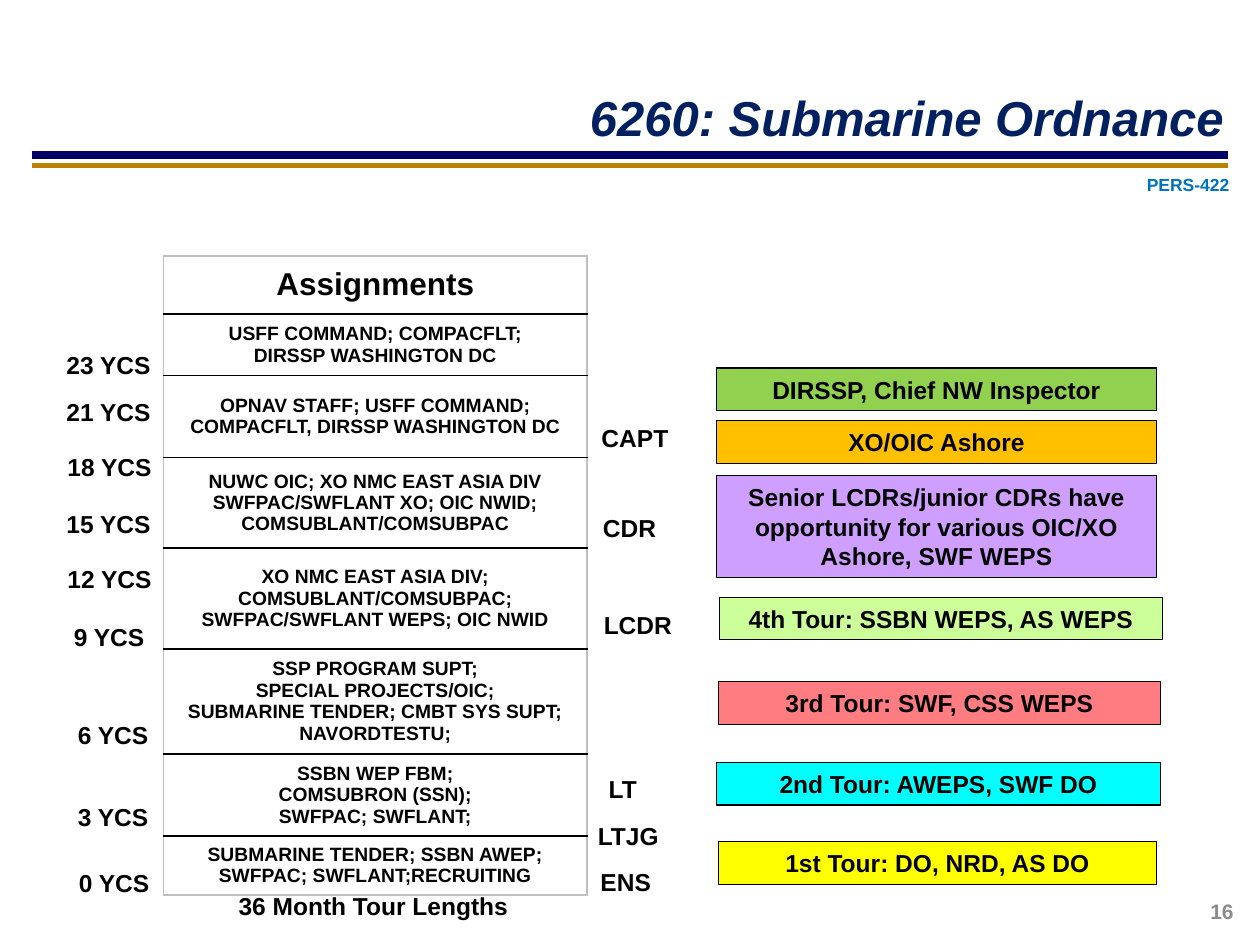
from pptx import Presentation
from pptx.dml.color import RGBColor
from pptx.enum.shapes import MSO_CONNECTOR, MSO_SHAPE
from pptx.enum.text import MSO_ANCHOR, MSO_AUTO_SIZE, PP_ALIGN
from pptx.oxml.ns import qn
from pptx.util import Cm, Pt
from lxml import etree

MID, RIGHT = PP_ALIGN.CENTER, PP_ALIGN.RIGHT
TOP, CENTER = MSO_ANCHOR.TOP, MSO_ANCHOR.MIDDLE
RECT = MSO_SHAPE.RECTANGLE
LINE = MSO_CONNECTOR.STRAIGHT
FIXED = MSO_AUTO_SIZE.NONE

COLORS = {
    "black": "000000", "white": "FFFFFF", "navy": "002060", "rule": "000066",
    "gold": "B98200", "blue": "0070C0", "gray": "8C8C8C", "edge": "BFBFBF",
    "green": "92D050", "orange": "FFC000", "purple": "CF9FFF",
    "lime": "CCFF99", "red": "FF7C80", "cyan": "00FFFF", "yellow": "FFFF00",
}

TOURS = [
    (1.17, 18, ["Assignments"]),
    (1.24, 11, ["USFF COMMAND; COMPACFLT;", "DIRSSP WASHINGTON DC"]),
    (1.65, 11, ["OPNAV STAFF; USFF COMMAND; COMPACFLT, DIRSSP WASHINGTON DC"]),
    (1.83, 11, ["NUWC OIC; XO NMC EAST ASIA DIV",
                "SWFPAC/SWFLANT XO; OIC NWID; COMSUBLANT/COMSUBPAC"]),
    (2.03, 11, ["XO NMC EAST ASIA DIV;", "COMSUBLANT/COMSUBPAC;",
                "SWFPAC/SWFLANT WEPS; OIC NWID"]),
    (2.11, 11, ["SSP PROGRAM SUPT;", "SPECIAL PROJECTS/OIC;",
                "SUBMARINE TENDER; CMBT SYS SUPT;", "NAVORDTESTU;"]),
    (1.65, 11, ["SSBN WEP FBM;", "COMSUBRON (SSN);", "SWFPAC; SWFLANT;"]),
    (1.19, 11, ["SUBMARINE TENDER; SSBN AWEP; SWFPAC; SWFLANT;RECRUITING"]),
]

YEARS = [
    (23, 1.07, 6.93), (21, 1.07, 7.87), (18, 1.09, 8.99), (15, 1.07, 10.13),
    (12, 1.09, 11.25), (9, 1.22, 12.42), (6, 1.3, 14.4), (3, 1.3, 16.05),
    (0, 1.32, 17.37),
]

RANKS = [
    ("CAPT", 11.86, 8.41, 1.88), ("CDR", 11.89, 10.21, 1.6),
    ("LCDR", 11.91, 12.17, 1.9), ("LT", 12.01, 15.47, 1.09),
    ("LTJG", 11.79, 16.43, 1.75), ("ENS", 11.84, 17.35, 1.55),
]

BARS = [
    ("DIRSSP, Chief NW Inspector", "green", 14.45, 7.42, 8.86, 0.86),
    ("XO/OIC Ashore", "orange", 14.45, 8.48, 8.86, 0.86),
    ("Senior LCDRs/junior CDRs have opportunity for various OIC/XO "
     "Ashore, SWF WEPS", "purple", 14.45, 9.58, 8.86, 2.06),
    ("4th Tour: SSBN WEPS, AS WEPS", "lime", 14.5, 12.04, 8.94, 0.86),
    ("3rd Tour: SWF, CSS WEPS", "red", 14.48, 13.74, 8.92, 0.86),
    ("2nd Tour: AWEPS, SWF DO", "cyan", 14.45, 15.37, 8.94, 0.86),
    ("1st Tour: DO, NRD, AS DO", "yellow", 14.48, 16.97, 8.84, 0.86),
]


def color(name):
    return RGBColor.from_string(COLORS[name])


class Board:
    font = "Arial"

    def __init__(self, slide):
        self.slide = slide
        self.shapes = slide.shapes

    def fill_text(self, frame, lines, size=14, ink="black", align=MID, slant=False):
        for i, line in enumerate(lines):
            para = frame.add_paragraph() if i else frame.paragraphs[0]
            para.alignment = align
            run = para.add_run()
            run.text = line
            font = run.font
            font.name, font.size = self.font, Pt(size)
            font.bold, font.italic = True, slant
            font.color.rgb = color(ink)

    def title(self, text, x, y, w, h):
        head = self.shapes.title
        head.left, head.top, head.width, head.height = map(Cm, (x, y, w, h))
        frame = head.text_frame
        frame.auto_size = FIXED
        frame.vertical_anchor = CENTER
        self.fill_text(frame, [text], 28, "navy", RIGHT, True)

    def label(self, text, x, y, w, h, wrap=False, anchor=TOP, **style):
        frame = self.shapes.add_textbox(*map(Cm, (x, y, w, h))).text_frame
        frame.word_wrap = wrap
        frame.vertical_anchor = anchor
        self.fill_text(frame, [text], **style)

    def bar(self, text, fill, x, y, w, h):
        box = self.shapes.add_shape(RECT, *map(Cm, (x, y, w, h)))
        box.shadow.inherit = False
        box.fill.solid()
        box.fill.fore_color.rgb = color(fill)
        box.line.color.rgb = color("black")
        box.line.width = Pt(0.75)
        box.text_frame.word_wrap = True
        box.text_frame.vertical_anchor = CENTER
        self.fill_text(box.text_frame, [text])

    def rule(self, y, ink, width):
        line = self.shapes.add_connector(LINE, Cm(0.64), Cm(y), Cm(24.76), Cm(y))
        line.line.color.rgb = color(ink)
        line.line.width = Pt(width)
        etree.SubElement(line._element.spPr, qn("a:effectLst"))

    def border(self, cell, side, ink):
        props = cell._tc.get_or_add_tcPr()
        edge = etree.SubElement(props, qn("a:ln" + side), w=str(Pt(1)))
        fill = etree.SubElement(edge, qn("a:solidFill"))
        etree.SubElement(fill, qn("a:srgbClr"), val=COLORS[ink])

    def table(self, rows, x, y, w):
        high = sum(row[0] for row in rows)
        grid = self.shapes.add_table(len(rows), 1, *map(Cm, (x, y, w, high))).table
        grid.first_row = grid.horz_banding = False
        last = len(rows) - 1
        for i, (tall, size, lines) in enumerate(rows):
            grid.rows[i].height = Cm(tall)
            cell = grid.cell(i, 0)
            self.border(cell, "L", "edge")
            self.border(cell, "R", "edge")
            self.border(cell, "T", "black" if i else "edge")
            self.border(cell, "B", "black" if i < last else "edge")
            cell.fill.solid()
            cell.fill.fore_color.rgb = color("white")
            cell.vertical_anchor = CENTER
            self.fill_text(cell.text_frame, lines, size)


def main():
    deck = Presentation()
    deck.slide_width, deck.slide_height = Cm(25.4), Cm(19.05)
    board = Board(deck.slides.add_slide(deck.slide_layouts[5]))
    board.rule(3.12, "rule", 4.5)
    board.rule(3.33, "gold", 2.75)
    board.title("6260: Submarine Ordnance", 6.3, 1.6, 18.62, 1.5)
    board.label("PERS-422", 22.86, 3.38, 2.18, 0.69, size=10, ink="blue")
    board.table(TOURS, 3.3, 5.16, 8.53)
    for year, x, y in YEARS:
        board.label(f"{year} YCS", x, y, 2.24 if year > 9 else 1.96, 0.89)
    for rank, x, y, w in RANKS:
        board.label(rank, x, y, w, 0.91)
    for bar in BARS:
        board.bar(*bar)
    board.label("36 Month Tour Lengths", 4.09, 17.83, 6.88, 0.86, wrap=True)
    board.label("16", 17.07, 17.86, 8.05, 1.02, wrap=True, anchor=CENTER,
                size=12, ink="gray", align=RIGHT)
    deck.save("out.pptx")


if __name__ == "__main__":
    main()
